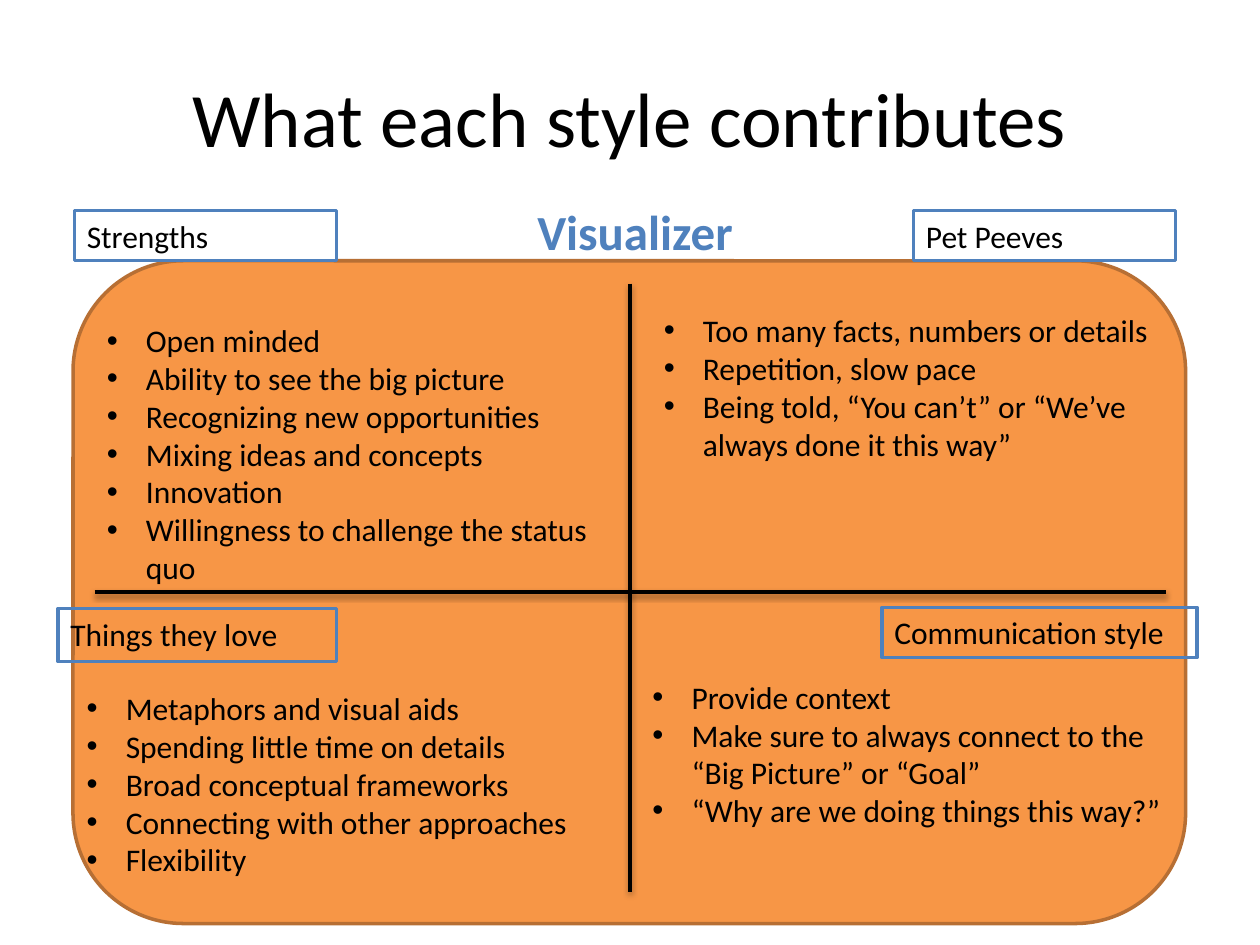
"""Build the slide on what the Visualizer style contributes."""
import lxml.etree
import pptx
import pptx.dml.color
import pptx.enum.shapes
import pptx.enum.text
import pptx.oxml.ns
import pptx.util

Inches = pptx.util.Inches
qn = pptx.oxml.ns.qn
SHAPES = pptx.enum.shapes.MSO_SHAPE
ALIGN = pptx.enum.text.PP_ALIGN
ANCHOR = pptx.enum.text.MSO_ANCHOR


def paint(color_format, value):
    """Apply a hex colour to a fill, line or font."""
    color_format.rgb = pptx.dml.color.RGBColor.from_string(value)


def write(shape, lines, size=18, color="000000", bold=False,
          align=ALIGN.LEFT, anchor=ANCHOR.TOP, bullets=False):
    """Write one paragraph per line in the given format."""
    frame = shape.text_frame
    frame.word_wrap = True
    frame.vertical_anchor = anchor
    frame.text = "\n".join(lines)
    for paragraph in frame.paragraphs:
        paragraph.alignment = align
        if bullets:
            properties = paragraph._p.get_or_add_pPr()
            properties.set("marL", str(Inches(0.31)))
            properties.set("indent", str(-Inches(0.31)))
            lxml.etree.SubElement(properties, qn("a:buFont"), typeface="Arial")
            lxml.etree.SubElement(properties, qn("a:buChar"), char="•")
        paragraph.font.name = "Calibri"
        paragraph.font.size = pptx.util.Pt(size)
        paragraph.font.bold = bold
        paint(paragraph.font.color, color)


deck = pptx.Presentation()
deck.slide_width, deck.slide_height = Inches(10), Inches(7.5)
slide = deck.slides.add_slide(deck.slide_layouts[5])

title = slide.shapes.title
title.left, title.top = Inches(0.5), Inches(0.3)
title.width, title.height = Inches(9), Inches(1.25)
write(title, ["What each style contributes"], size=44,
      align=ALIGN.CENTER, anchor=ANCHOR.MIDDLE)

panel = slide.shapes.add_shape(
    SHAPES.ROUNDED_RECTANGLE, Inches(0.58), Inches(2.07), Inches(8.83), Inches(5.26))
panel.shadow.inherit = False
panel.fill.solid()
paint(panel.fill.fore_color, "F79646")
paint(panel.line.color, "B76F34")
panel.line.width = pptx.util.Pt(2)

for x1, y1, x2, y2 in [(5, 2.25, 5, 7.08), (0.75, 4.7, 9.25, 4.7)]:
    divider = slide.shapes.add_connector(
        pptx.enum.shapes.MSO_CONNECTOR.STRAIGHT,
        Inches(x1), Inches(y1), Inches(x2), Inches(y2))
    paint(divider.line.color, "000000")
    divider.line.width = pptx.util.Pt(2)
    effects = lxml.etree.SubElement(divider._element.spPr, qn("a:effectLst"))
    shadow = lxml.etree.SubElement(
        effects, qn("a:outerShdw"), blurRad=str(pptx.util.Pt(3.1)),
        dist=str(pptx.util.Pt(1.6)), dir=str(90 * 60000), rotWithShape="0")
    shade = lxml.etree.SubElement(shadow, qn("a:srgbClr"), val="000000")
    lxml.etree.SubElement(shade, qn("a:alpha"), val="38000")

headings = [
    ("Strengths", 0.59, 1.67, 2.08, 0.4, True),
    ("Pet Peeves", 7.25, 1.67, 2.08, 0.4, True),
    ("Things they love", 0.46, 4.83, 2.21, 0.42, False),
    ("Communication style", 7, 4.82, 2.5, 0.4, False),
]
for text, left, top, width, height, filled in headings:
    heading = slide.shapes.add_shape(
        SHAPES.RECTANGLE, Inches(left), Inches(top), Inches(width), Inches(height))
    heading.shadow.inherit = False
    if filled:
        heading.fill.solid()
        paint(heading.fill.fore_color, "FFFFFF")
    else:
        heading.fill.background()
    paint(heading.line.color, "4F81BD")
    heading.line.width = pptx.util.Pt(2)
    write(heading, [text])

quadrants = [
    (5.17, 2.42, 4.08, 1.62, [
        "Too many facts, numbers or details",
        "Repetition, slow pace",
        "Being told, “You can’t” or “We’ve always done it this way”"]),
    (0.59, 5.42, 4.33, 1.62, [
        "Metaphors and visual aids",
        "Spending little time on details",
        "Broad conceptual frameworks",
        "Connecting with other approaches",
        "Flexibility"]),
    (5.08, 5.33, 4.25, 1.31, [
        "Provide context",
        "Make sure to always connect to the “Big Picture” or “Goal”",
        "“Why are we doing things this way?”"]),
    (0.75, 2.5, 4.17, 2.22, [
        "Open minded",
        "Ability to see the big picture",
        "Recognizing new opportunities",
        "Mixing ideas and concepts",
        "Innovation",
        "Willingness to challenge the status quo"]),
]
for left, top, width, height, points in quadrants:
    quadrant = slide.shapes.add_textbox(
        Inches(left), Inches(top), Inches(width), Inches(height))
    write(quadrant, points, bullets=True)

style_name = slide.shapes.add_textbox(
    Inches(2.75), Inches(1.55), Inches(4.58), Inches(0.57))
write(style_name, ["Visualizer"], size=28, color="4F81BD", bold=True,
      align=ALIGN.CENTER)

deck.save("out.pptx")
